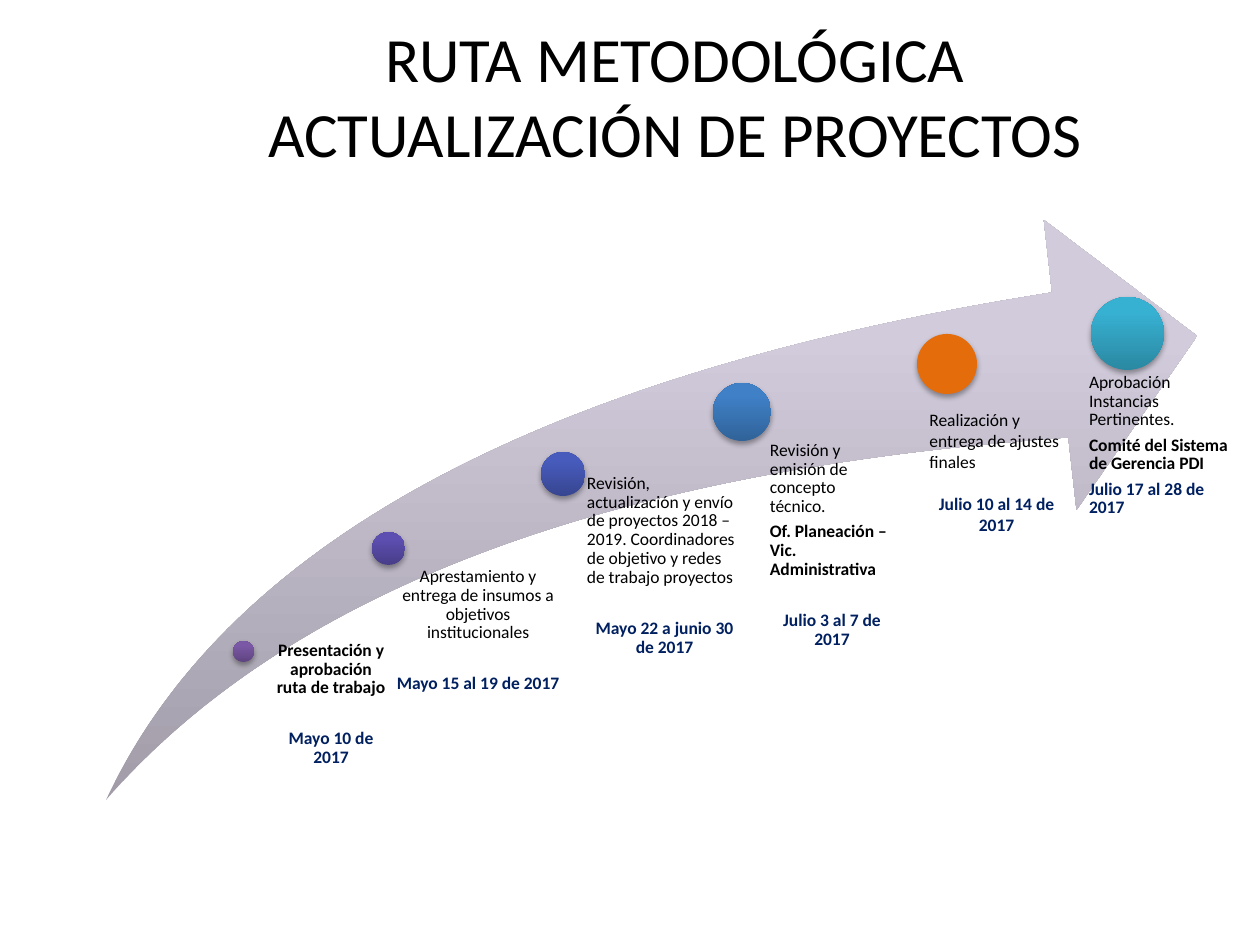
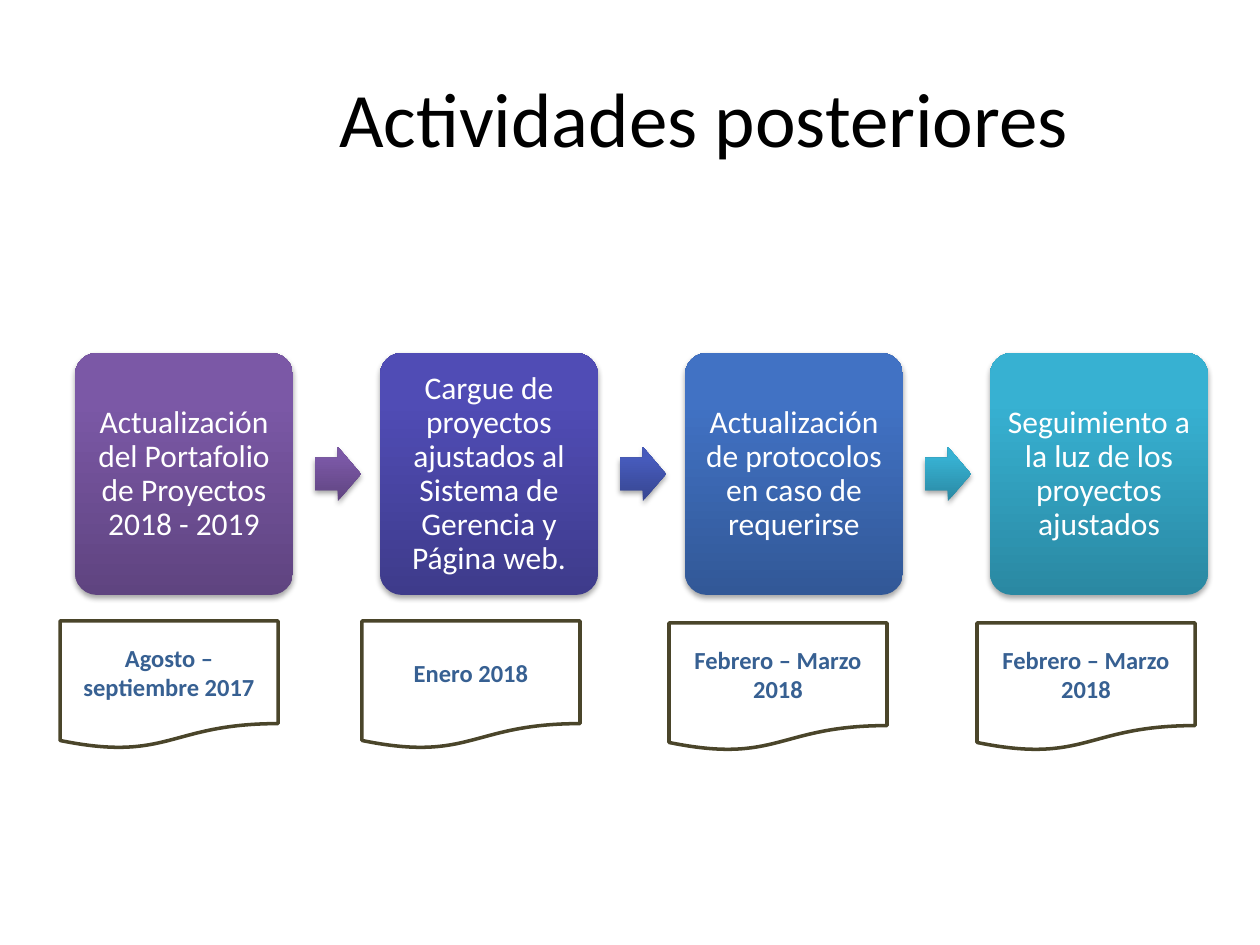
from lxml import etree
from pptx import Presentation
from pptx import util as u
from pptx.dml.color import RGBColor
from pptx.enum import shapes, text
from pptx.oxml.ns import qn

EMU_PER_PX = 914400 / 126
FONT = "Calibri"
BLACK = RGBColor(0x00, 0x00, 0x00)
WHITE = RGBColor(0xFF, 0xFF, 0xFF)
NAVY = RGBColor(0x00, 0x20, 0x60)
STEEL = RGBColor(0x37, 0x60, 0x92)
OLIVE = RGBColor(0x4A, 0x45, 0x2A)
ORANGE = RGBColor(0xE4, 0x6C, 0x0A)
LILAC = RGBColor(0xA1, 0x9C, 0xA8), RGBColor(0xD1, 0xCB, 0xDB)
PURPLE = RGBColor(0x5F, 0x44, 0x80), RGBColor(0x7B, 0x58, 0xA6)
VIOLET = RGBColor(0x48, 0x3D, 0x89), RGBColor(0x5D, 0x4F, 0xB1)
INDIGO = RGBColor(0x3E, 0x3B, 0x8B), RGBColor(0x50, 0x4C, 0xB5)
ROYAL = RGBColor(0x37, 0x46, 0x91), RGBColor(0x47, 0x5B, 0xBC)
COBALT = RGBColor(0x32, 0x58, 0x97), RGBColor(0x41, 0x72, 0xC4)
BLUE = RGBColor(0x30, 0x63, 0x99), RGBColor(0x3F, 0x80, 0xC7)
TEAL = RGBColor(0x2A, 0x88, 0xA2), RGBColor(0x37, 0xB1, 0xD2)

LEFT, CENTER = text.PP_ALIGN.LEFT, text.PP_ALIGN.CENTER
TOP, MIDDLE = text.MSO_ANCHOR.TOP, text.MSO_ANCHOR.MIDDLE
KIND = shapes.MSO_SHAPE

ROUTE_TITLE = "RUTA METODOLÓGICA ACTUALIZACIÓN DE PROYECTOS"
SWOOSH = (106, 220, 1091, 580)
TIGHT = dict(line=0.9, after=3.5, date_gap=14.5)
LOOSE = dict(line=1.0, after=0, date_gap=12)

MILESTONES = [
    dict(dot=(233, 641, 21), color=PURPLE, box=(265, 641, 121, 137), inset=11, spacing=TIGHT,
         task="Presentación y aprobación ruta de trabajo", task_bold=True, align=CENTER,
         date="Mayo 10 de 2017"),
    dict(dot=(372, 532, 33), color=VIOLET, box=(377, 567, 184, 194), inset=18, spacing=TIGHT,
         task="Aprestamiento y entrega de insumos a objetivos institucionales", align=CENTER,
         date="Mayo 15 al 19 de 2017"),
    dict(dot=(541, 452, 44), color=ROYAL, box=(563, 474, 179, 325), inset=24, spacing=TIGHT,
         task="Revisión, actualización y envío de proyectos 2018 – 2019. "
              "Coordinadores de objetivo y redes de trabajo proyectos",
         date="Mayo 22 a junio 30 de 2017"),
    dict(dot=(713, 383, 58), color=BLUE, box=(740, 441, 154, 267), inset=30, spacing=TIGHT,
         task="Revisión y emisión de concepto técnico.",
         owner="Of. Planeación – Vic. Administrativa", date="Julio 3 al 7 de 2017"),
    dict(dot=(1091, 297, 73), color=TEAL, box=(1050, 373, 185, 426), inset=39,
         spacing=dict(TIGHT, date_gap=0), task="Aprobación Instancias Pertinentes.",
         owner="Comité del Sistema de Gerencia PDI", date="Julio 17 al 28 de 2017",
         date_align=LEFT),
    dict(dot=(917, 334, 60), color=ORANGE, box=(917, 403, 159, 210), inset=None, spacing=LOOSE,
         task="Realización y entrega de ajustes finales", date="Julio 10 al 14 de 2017"),
]

NEXT_TITLE = "Actividades posteriores"
ACTIVITIES = [
    ("Actualización del Portafolio de Proyectos 2018 - 2019", INDIGO, PURPLE,
     "Agosto – septiembre 2017", (60, 621)),
    ("Cargue de proyectos ajustados al Sistema de Gerencia y Página web.", INDIGO, INDIGO,
     "Enero 2018", (362, 621)),
    ("Actualización de protocolos en caso de requerirse", COBALT, COBALT,
     "Febrero – Marzo 2018", (669, 623)),
    ("Seguimiento a la luz de los proyectos ajustados", TEAL, TEAL,
     "Febrero – Marzo 2018", (977, 623)),
]
ARROW_COLORS = [PURPLE, ROYAL, TEAL]
CARD_LEFT, CARD_TOP, CARD_STEP = 75, 353, 305
CARD_W, CARD_H = 218, 242
ARROW_DX, ARROW_W, ARROW_H = 240, 46, 54
DATE_H = 128


def px(n):
    return u.Emu(round(n * EMU_PER_PX))


def add_title(prs, title, box, size):
    s = prs.slides.add_slide(prs.slide_layouts[5])
    sp = s.shapes.title
    sp.left, sp.top, sp.width, sp.height = map(px, box)
    sp.fill.solid()
    sp.fill.fore_color.rgb = WHITE
    sp.text_frame.vertical_anchor = MIDDLE
    write(sp.text_frame, title, size, BLACK)
    return s


def add_shape(s, kind, box, color=None, shadow=True, adjust=()):
    sp = s.shapes.add_shape(kind, *map(px, box))
    sp.shadow.inherit = False
    sp.line.fill.background()
    for i, value in enumerate(adjust):
        sp.adjustments[i] = value
    if color is None:
        sp.fill.background()
    elif isinstance(color, RGBColor):
        sp.fill.solid()
        sp.fill.fore_color.rgb = color
    else:
        sp.fill.gradient()
        sp.fill.gradient_angle = 90
        for stop, rgb, position in zip(sp.fill.gradient_stops, color, (0, 0.8)):
            stop.color.rgb, stop.position = rgb, position
    if shadow:
        add_shadow(sp)
    return sp


def add_shadow(sp):
    effects = sp.element.spPr.find(qn("a:effectLst"))
    shadow = etree.SubElement(effects, qn("a:outerShdw"), blurRad=str(u.Pt(3.1)),
                              dist=str(u.Pt(1.8)), dir="5400000", rotWithShape="0")
    color = etree.SubElement(shadow, qn("a:srgbClr"), val="000000")
    etree.SubElement(color, qn("a:alpha"), val="35000")


def write(tf, content, size, color, bold=False, align=CENTER, line=None, before=0, after=0):
    p = tf.paragraphs[0] if not tf.text else tf.add_paragraph()
    p.text = content
    p.alignment = align
    p.line_spacing = line
    p.space_before, p.space_after = u.Pt(before), u.Pt(after)
    p.font.name, p.font.size, p.font.bold = FONT, u.Pt(size), bold
    p.font.color.rgb = color


def set_insets(tf, left, top, right, bottom):
    tf.margin_left, tf.margin_top = px(left), px(top)
    tf.margin_right, tf.margin_bottom = px(right), px(bottom)


def add_milestone(s, m):
    x, y, d = m["dot"]
    add_shape(s, KIND.OVAL, (x, y, d, d), m["color"])
    tf = s.shapes.add_textbox(*map(px, m["box"])).text_frame
    tf.word_wrap = True
    tf.vertical_anchor = TOP
    if m["inset"] is not None:
        set_insets(tf, m["inset"], 0, 0, 0)
    spacing = dict(line=m["spacing"]["line"], after=m["spacing"]["after"])
    write(tf, m["task"], 10, BLACK, m.get("task_bold", False), m.get("align", LEFT), **spacing)
    if "owner" in m:
        write(tf, m["owner"], 10, BLACK, True, LEFT, **spacing)
    write(tf, m["date"], 10, NAVY, True, m.get("date_align", CENTER),
          before=m["spacing"]["date_gap"], **spacing)


def build_route(prs):
    s = add_title(prs, ROUTE_TITLE, (213, 16, 924, 158), 36)
    add_shape(s, KIND.SWOOSH_ARROW, SWOOSH, LILAC, shadow=False, adjust=(0.25, 0.25))
    for m in MILESTONES:
        add_milestone(s, m)


def build_next_activities(prs):
    s = add_title(prs, NEXT_TITLE, (302, 38, 804, 158), 44)
    for i, (activity, _, color, date, (date_x, date_y)) in enumerate(ACTIVITIES):
        x = CARD_LEFT + i * CARD_STEP
        card = add_shape(s, KIND.ROUNDED_RECTANGLE, (x, CARD_TOP, CARD_W, CARD_H), color,
                         adjust=(0.1,))
        tf = card.text_frame
        set_insets(tf, 9, 9, 9, 9)
        tf.vertical_anchor = MIDDLE
        write(tf, activity, 18, WHITE, line=0.9)
        if i < len(ARROW_COLORS):
            arrow_y = CARD_TOP + (CARD_H - ARROW_H) // 2
            add_shape(s, KIND.RIGHT_ARROW, (x + ARROW_DX, arrow_y, ARROW_W, ARROW_H),
                      ARROW_COLORS[i], adjust=(0.6, 0.5))
        note = add_shape(s, KIND.FLOWCHART_DOCUMENT, (date_x, date_y, CARD_W, DATE_H),
                         shadow=False)
        note.line.color.rgb = OLIVE
        note.line.width = u.Pt(2)
        note.text_frame.vertical_anchor = MIDDLE
        write(note.text_frame, date, 14, STEEL, True)


def main():
    prs = Presentation()
    prs.slide_width, prs.slide_height = u.Inches(10), u.Inches(7.5)
    build_route(prs)
    build_next_activities(prs)
    prs.save("out.pptx")


if __name__ == "__main__":
    main()
